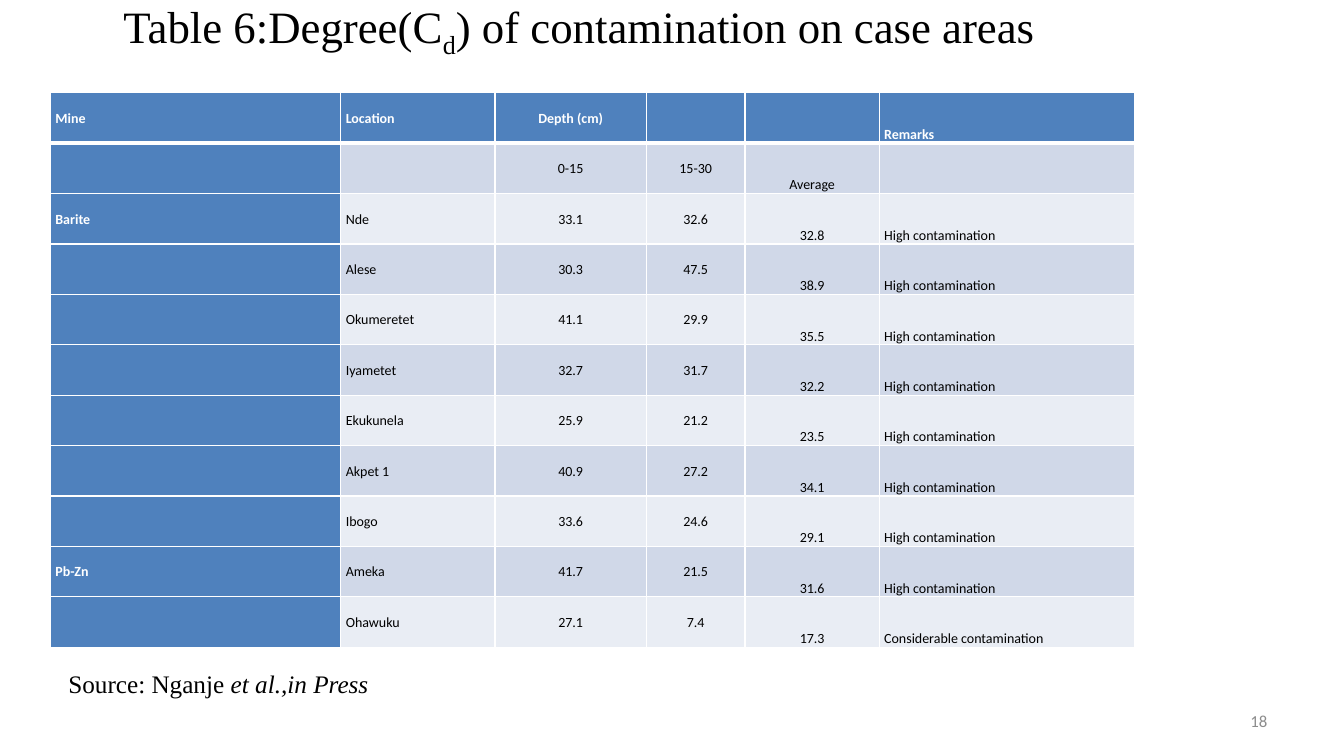
from lxml import etree
from pptx import Presentation
from pptx import util as u
from pptx.dml.color import RGBColor
from pptx.enum import text
from pptx.oxml.ns import qn

TITLE = [("Table 6:Degree(C", {}), ("d", {"baseline": -25000}),
         (") of contamination on case areas", {})]
SOURCE = [("Source: Nganje ", {}), ("et al.,in Press", {"italic": True})]
PAGE = [("18", {})]
HIGH = "High contamination"
ROWS = [
    ("Mine", "Location", "Depth (cm)", "", "", "Remarks"),
    ("", "", "0-15", "15-30", "Average", ""),
    ("Barite", "Nde", "33.1", "32.6", "32.8", HIGH),
    ("", "Alese", "30.3", "47.5", "38.9", HIGH),
    ("", "Okumeretet", "41.1", "29.9", "35.5", HIGH),
    ("", "Iyametet", "32.7", "31.7", "32.2", HIGH),
    ("", "Ekukunela", "25.9", "21.2", "23.5", HIGH),
    ("", "Akpet 1", "40.9", "27.2", "34.1", HIGH),
    ("", "Ibogo", "33.6", "24.6", "29.1", HIGH),
    ("Pb-Zn", "Ameka", "41.7", "21.5", "31.6", HIGH),
    ("", "Ohawuku", "27.1", "7.4", "17.3", "Considerable contamination"),
]
COLUMN_WIDTHS = (2.88, 1.53, 1.5, 0.98, 1.33, 2.53)
ROW_HEIGHT = 0.5
CENTRED_COLUMNS = (2, 3, 4)
BOTTOM_COLUMNS = (4, 5)

THEME = {
    "serif": "Times New Roman", "sans": "Calibri",
    "title": 32, "source": 18, "page": 12, "cell": 10,
    "black": "000000", "white": "FFFFFF", "grey": "8C8C8C",
    "head": "4F81BD", "bands": ("E9EDF4", "D0D8E8"),
    "rule": 1, "head_rule": 3,
}
LEFT, MIDDLE, BOTTOM = (text.PP_ALIGN.LEFT, text.MSO_ANCHOR.MIDDLE,
                        text.MSO_ANCHOR.BOTTOM)
CENTER, RIGHT = text.PP_ALIGN.CENTER, text.PP_ALIGN.RIGHT


def write(tf, runs, font, size, color, align=LEFT, bold=False, spacing=None):
    """Fill the first paragraph with (text, format) runs."""
    p = tf.paragraphs[0]
    p.alignment = align
    if spacing:
        p.line_spacing = spacing
    for words, style in runs:
        r = p.add_run()
        r.text = words
        r.font.name, r.font.size, r.font.bold = font, u.Pt(size), bold
        r.font.color.rgb = RGBColor.from_string(color)
        r.font.italic = style.get("italic", False)
        if "baseline" in style:
            r.font._element.set("baseline", str(style["baseline"]))


def place(sp, left, top, width, height, anchor):
    sp.left, sp.top = u.Inches(left), u.Inches(top)
    sp.width, sp.height = u.Inches(width), u.Inches(height)
    tf = sp.text_frame
    tf.word_wrap = True
    tf.auto_size = text.MSO_AUTO_SIZE.NONE
    tf.vertical_anchor = anchor
    return tf


def add_text(s, box, anchor, runs, *args, **kwargs):
    sp = s.shapes.add_textbox(0, 0, 0, 0)
    write(place(sp, *box, anchor), runs, *args, **kwargs)


def set_borders(cell, **widths):
    """Draw white cell edges; widths are points keyed by L, R, T, B."""
    props = cell._tc.get_or_add_tcPr()
    for side, width in widths.items():
        ln = etree.SubElement(props, qn(f"a:ln{side}"), w=str(u.Pt(width)))
        fill = etree.SubElement(ln, qn("a:solidFill"))
        etree.SubElement(fill, qn("a:srgbClr"), val=THEME["white"])


def format_cell(cell, words, row, col):
    is_head = row == 0 or col == 0
    rule, head_rule = THEME["rule"], THEME["head_rule"]
    set_borders(cell, L=rule, R=rule, T=head_rule if row == 1 else rule,
                B=head_rule if row == 0 else rule)
    cell.fill.solid()
    cell.fill.fore_color.rgb = RGBColor.from_string(
        THEME["head"] if is_head else THEME["bands"][row % 2])
    cell.margin_left = cell.margin_right = u.Inches(0.05)
    cell.margin_top = cell.margin_bottom = 0
    cell.vertical_anchor = BOTTOM if col in BOTTOM_COLUMNS else MIDDLE
    if words:
        write(cell.text_frame, [(words, {})], THEME["sans"], THEME["cell"],
              THEME["white"] if is_head else THEME["black"],
              align=CENTER if col in CENTRED_COLUMNS else LEFT,
              bold=is_head, spacing=1.07)


def add_contamination_table(s, left, top):
    frame = s.shapes.add_table(
        len(ROWS), len(COLUMN_WIDTHS), u.Inches(left), u.Inches(top),
        u.Inches(sum(COLUMN_WIDTHS)), u.Inches(ROW_HEIGHT * len(ROWS)))
    table = frame.table
    table.first_col = True
    for column, width in zip(table.columns, COLUMN_WIDTHS):
        column.width = u.Inches(width)
    for row, values in enumerate(ROWS):
        table.rows[row].height = u.Inches(ROW_HEIGHT)
        for col, words in enumerate(values):
            format_cell(table.cell(row, col), words, row, col)


def main():
    prs = Presentation()
    prs.slide_width, prs.slide_height = u.Inches(13.33), u.Inches(7.5)
    s = prs.slides.add_slide(prs.slide_layouts[5])
    add_text(s, (9.56, 6.95, 3.11, 0.4), MIDDLE, PAGE, THEME["sans"],
             THEME["page"], THEME["grey"], align=RIGHT)
    write(place(s.shapes.title, -0.17, 0, 11.83, 0.58, MIDDLE), TITLE,
          THEME["serif"], THEME["title"], THEME["black"], align=CENTER)
    add_contamination_table(s, 0.5, 0.92)
    add_text(s, (0.58, 6.58, 4, 0.4), text.MSO_ANCHOR.TOP, SOURCE,
             THEME["serif"], THEME["source"], THEME["black"])
    prs.save("out.pptx")


if __name__ == "__main__":
    main()
